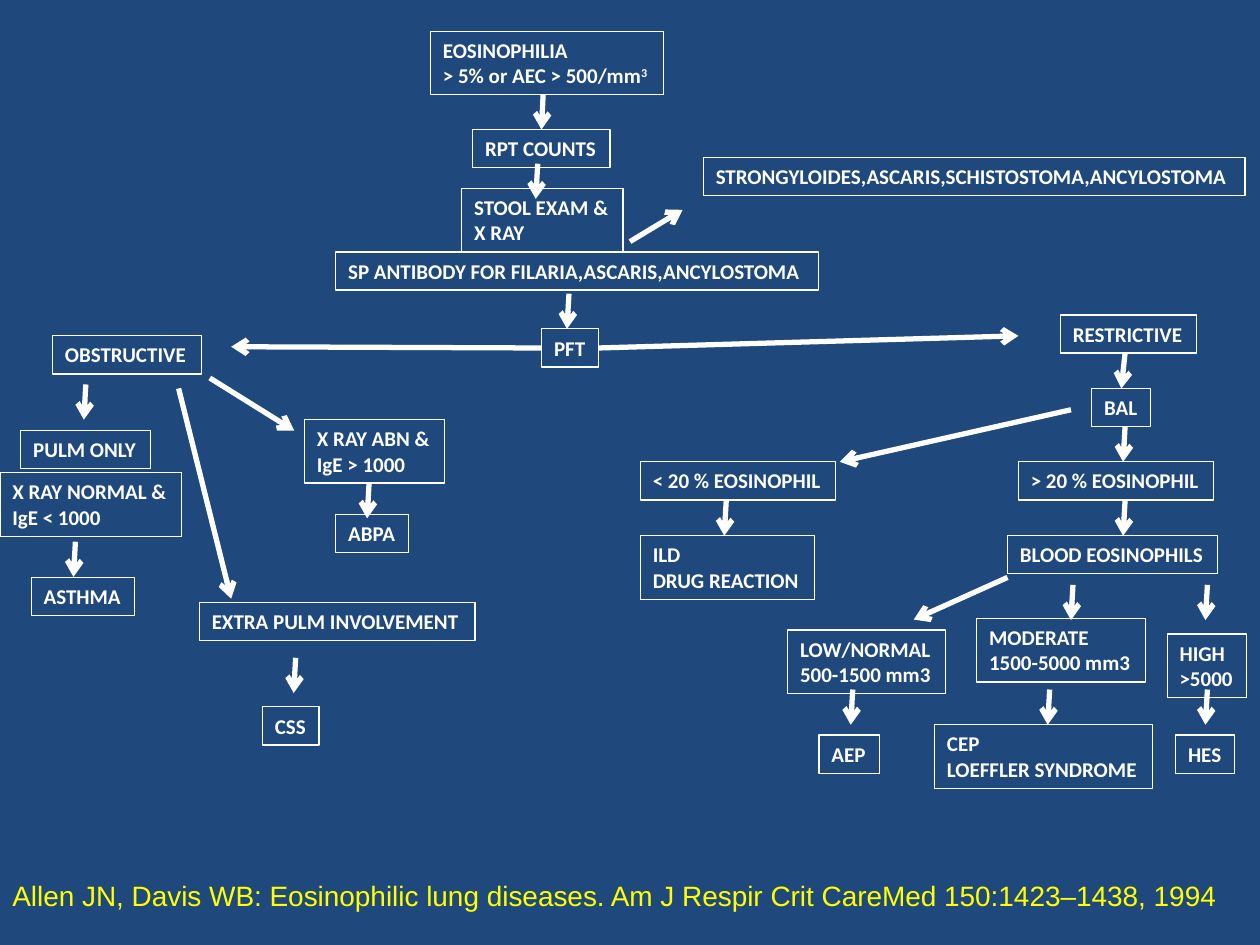
from pptx import Presentation
from pptx.dml.color import RGBColor
from pptx.enum.shapes import MSO_CONNECTOR, MSO_SHAPE
from pptx.enum.text import MSO_ANCHOR, MSO_AUTO_SIZE, PP_ALIGN
from pptx.oxml.ns import qn
from pptx.util import Cm, Pt
from lxml import etree

RECTANGLE = MSO_SHAPE.RECTANGLE
STRAIGHT = MSO_CONNECTOR.STRAIGHT
FIT_SHAPE = MSO_AUTO_SIZE.SHAPE_TO_FIT_TEXT
LEFT_SIDE, RIGHT_SIDE, TOP_SIDE = 1, 3, 0

COLORS = {name: RGBColor.from_string(value) for name, value in {
    "background": "1F497D",
    "white": "FFFFFF",
    "citation": "FFFF00",
}.items()}

deck = Presentation()
deck.slide_width, deck.slide_height = Cm(25.4), Cm(19.05)
page = deck.slides.add_slide(deck.slide_layouts[6])
page.background.fill.solid()
page.background.fill.fore_color.rgb = COLORS["background"]


def add_arrow(x1, y1, x2, y2):
    arrow = page.shapes.add_connector(STRAIGHT, Cm(x1), Cm(y1), Cm(x2), Cm(y2))
    arrow.line.color.rgb = COLORS["white"]
    arrow.line.width = Pt(3)
    etree.SubElement(arrow.line._get_or_add_ln(), qn("a:tailEnd"), type="arrow")
    etree.SubElement(arrow._element.spPr, qn("a:effectLst"))
    return arrow


# Boxes: left, top, width in cm, then one string per line of text
box_rows = [
    (8.68, 0.63, 4.7, "EOSINOPHILIA", "> 5% or AEC > 500/mm"),
    (9.53, 2.61, 2.77, "RPT COUNTS"),
    (9.31, 3.8, 3.25, "STOOL EXAM &", "X RAY"),
    (6.77, 5.08, 9.73, "SP ANTIBODY FOR FILARIA,ASCARIS,ANCYLOSTOMA"),
    (14.18, 3.17, 10.92, "STRONGYLOIDES,ASCARIS,SCHISTOSTOMA,ANCYLOSTOMA"),
    (10.92, 6.63, 1.14, "PFT"),
    (1.06, 6.77, 3.0, "OBSTRUCTIVE"),
    (4.02, 12.14, 5.56, "EXTRA PULM INVOLVEMENT"),
    (5.29, 14.25, 1.14, "CSS"),
    (0.42, 8.68, 2.62, "PULM ONLY"),
    (0, 9.53, 3.66, "X RAY NORMAL &", "IgE < 1000"),
    (0.63, 11.64, 2.08, "ASTHMA"),
    (6.14, 8.46, 2.82, "X RAY ABN &", "IgE > 1000"),
    (6.77, 10.37, 1.47, "ABPA"),
    (21.38, 6.35, 2.74, "RESTRICTIVE"),
    (22.01, 7.83, 1.19, "BAL"),
    (12.91, 9.31, 3.94, "< 20 % EOSINOPHIL"),
    (12.91, 10.8, 3.51, "ILD", "DRUG REACTION"),
    (20.53, 9.31, 3.94, "> 20 % EOSINOPHIL"),
    (20.31, 10.8, 4.24, "BLOOD EOSINOPHILS"),
    (23.53, 12.78, 1.6, "HIGH", ">5000"),
    (19.69, 12.47, 3.4, "MODERATE", "1500-5000 mm3"),
    (15.88, 12.7, 3.18, "LOW/NORMAL", "500-1500 mm3"),
    (16.51, 14.82, 1.22, "AEP"),
    (18.84, 14.61, 4.39, "CEP", "LOEFFLER SYNDROME"),
    (23.7, 14.82, 1.19, "HES"),
]
boxes = {}
for left, top, width, *lines in box_rows:
    height = 0.26 + 0.51 * len(lines)
    box = page.shapes.add_shape(RECTANGLE, Cm(left), Cm(top), Cm(width), Cm(height))
    box.shadow.inherit = False
    box.fill.background()
    box.line.color.rgb = COLORS["white"]
    box.line.width = Pt(0.75)
    frame = box.text_frame
    frame.text = "\n".join(lines)
    frame.word_wrap = False
    frame.auto_size = FIT_SHAPE
    frame.vertical_anchor = MSO_ANCHOR.TOP
    for para in frame.paragraphs:
        para.alignment = PP_ALIGN.LEFT
        para.font.name = "Calibri"
        para.font.size = Pt(12)
        para.font.bold = True
        para.font.color.rgb = COLORS["white"]
    boxes[lines[0]] = box

exponent = boxes["EOSINOPHILIA"].text_frame.paragraphs[1].add_run()
exponent.text = "3"
exponent.font._element.set("baseline", "30000")

# Short downward steps share one length and a slight drift to the left
STEP_DRIFT, STEP_LENGTH = 0.04, 0.71
steps = [
    (10.84, 3.3), (11.47, 5.92), (1.73, 7.75), (7.44, 9.74),
    (1.52, 10.92), (5.96, 13.26), (22.68, 8.6), (14.64, 10.09),
    (22.68, 10.09), (17.19, 13.9), (21.16, 13.9), (24.34, 13.9),
    (21.63, 11.79), (24.34, 11.79),
]
for x, y in steps:
    add_arrow(x, y, x - STEP_DRIFT, y + STEP_LENGTH)

# Steps that end on the top of a box
for x, y, target in [(10.95, 1.9, "RPT COUNTS"), (22.68, 7.11, "BAL")]:
    arrow = add_arrow(x, y, x - STEP_DRIFT, y + STEP_LENGTH)
    arrow.end_connect(boxes[target], TOP_SIDE)

# Slanted branches
branches = [
    (12.7, 4.87, 13.76, 4.23),
    (3.6, 7.83, 4.66, 12.07),
    (4.23, 7.62, 5.93, 8.68),
    (21.59, 8.26, 16.93, 9.31),
    (20.31, 11.64, 18.42, 12.49),
]
for ends in branches:
    add_arrow(*ends)

# PFT splits into the obstructive and the restrictive side
for side, start_x, end_x, end_y in [(LEFT_SIDE, 10.92, 4.66, 6.99),
                                    (RIGHT_SIDE, 12.06, 20.53, 6.77)]:
    arrow = add_arrow(start_x, 7.02, end_x, end_y)
    arrow.begin_connect(boxes["PFT"], side)

citation = page.shapes.add_textbox(Cm(0), Cm(17.58), Cm(25.4), Cm(0.94))
citation.text_frame.word_wrap = True
citation.text_frame.auto_size = FIT_SHAPE
para = citation.text_frame.paragraphs[0]
para.text = ("Allen JN, Davis WB: Eosinophilic lung diseases. "
             "Am J Respir Crit CareMed 150:1423–1438, 1994")
para.font.name = "Arial"
para.font.size = Pt(16)
para.font.color.rgb = COLORS["citation"]

deck.save("out.pptx")
